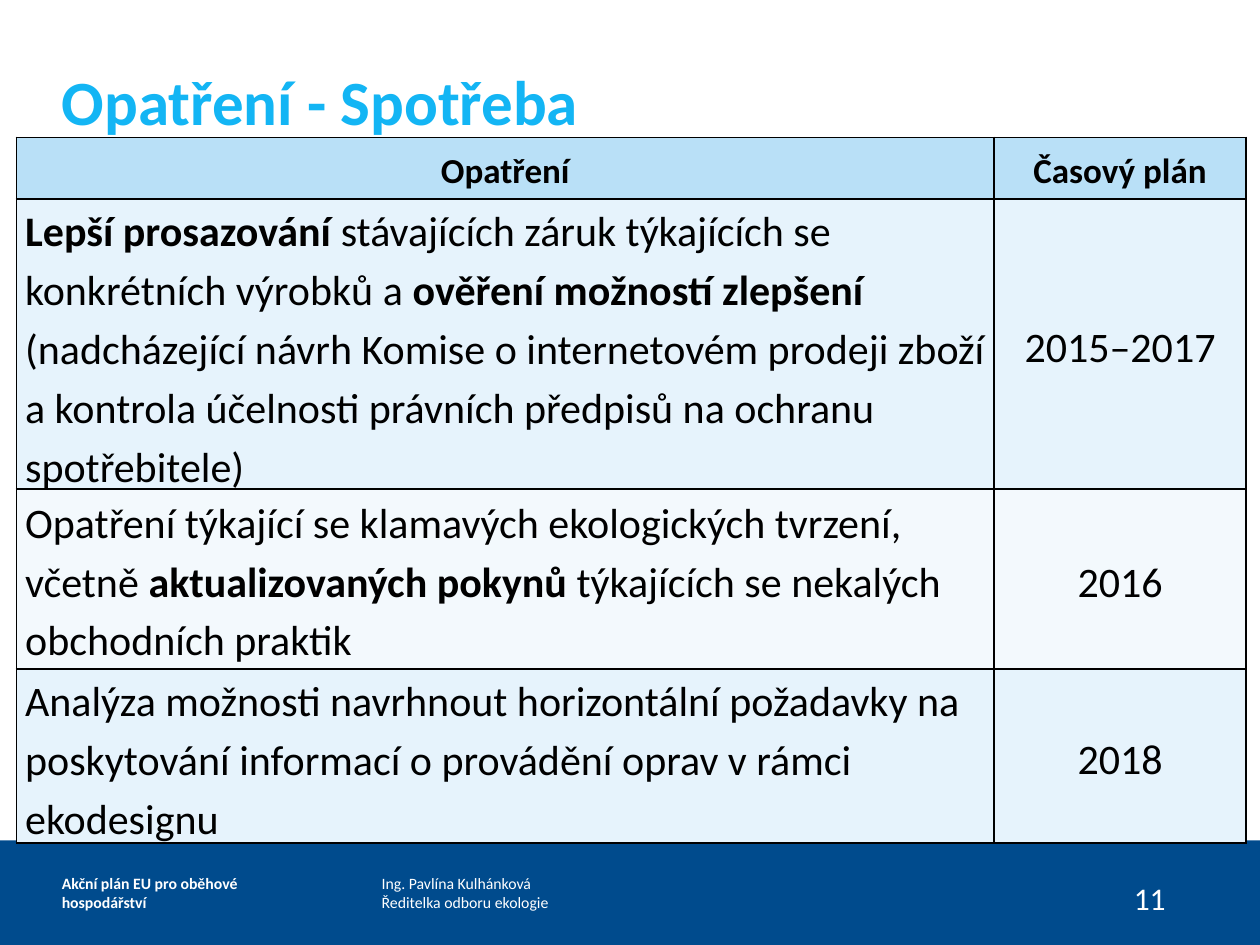
from lxml import etree
from pptx import Presentation
from pptx.dml.color import RGBColor
from pptx.enum import shapes, text
from pptx.util import Inches, Pt

NS = "http://schemas.openxmlformats.org/drawingml/2006/main"
MID = text.MSO_ANCHOR.MIDDLE


def style(font, size, color, bold=False):
    font.name, font.size, font.bold = "Calibri", Pt(size), bold
    font.color.rgb = RGBColor.from_string(color)


def write(shape, lines, size, color, bold=False, inset=0):
    frame = shape.text_frame
    frame.word_wrap, frame.vertical_anchor = True, MID
    frame.margin_left = frame.margin_right = Inches(inset)
    frame.margin_top = frame.margin_bottom = Inches(inset / 2)
    frame.text = "\n".join(lines)
    for para in frame.paragraphs:
        para.alignment = text.PP_ALIGN.LEFT
        style(para.font, size, color, bold)


prs = Presentation()
prs.slide_width, prs.slide_height = Inches(10), Inches(7.5)
slide = prs.slides.add_slide(prs.slide_layouts[5])

# Blue background with a white panel above the footer
back = slide.background.fill
back.solid()
back.fore_color.rgb = RGBColor.from_string("004B8D")
panel = slide.shapes.add_shape(
    shapes.MSO_SHAPE.RECTANGLE, 0, 0, Inches(10), Inches(6.67))
panel.shadow.inherit = False
panel.fill.solid()
panel.fill.fore_color.rgb = RGBColor.from_string("FFFFFF")
panel.line.fill.background()
slide.shapes._spTree.insert(2, panel._element)

# Footer
footer = [
    (0.49, 6.67, 2.05, 0.83, ["Akční plán EU pro oběhové hospodářství"], 9, True, 0),
    (3.03, 6.67, 1.97, 0.83,
     ["Ing. Pavlína Kulhánková", "Ředitelka odboru ekologie"], 9, False, 0),
    (8.9, 6.93, 0.5, 0.4, ["11"], 18, False, 0.1),
]
for left, top, width, height, lines, size, bold, inset in footer:
    box = slide.shapes.add_textbox(*map(Inches, (left, top, width, height)))
    write(box, lines, size, "FFFFFF", bold, inset)

# Title
title = slide.shapes.title
title.left, title.top = Inches(0.49), Inches(0.49)
title.width, title.height = Inches(9.01), Inches(0.61)
write(title, ["Opatření - Spotřeba"], 36, "13B5F4", True)

# Table: each cell is a list of runs, with every second run in bold
rows = [
    (0.49, "B9E0F7", ["", "Opatření"], ["", "Časový plán"]),
    (2.3, "E6F3FC",
     ["", "Lepší prosazování",
      " stávajících záruk týkajících se konkrétních výrobků a ",
      "ověření možností zlepšení",
      " (nadcházející návrh Komise o internetovém prodeji zboží a kontrola "
      "účelnosti právních předpisů na ochranu spotřebitele)"],
     ["2015–2017"]),
    (1.43, "F3F9FD",
     ["Opatření týkající se klamavých ekologických tvrzení, včetně ",
      "aktualizovaných pokynů", " týkajících se nekalých obchodních praktik"],
     ["2016"]),
    (1.38, "E6F3FC",
     ["Analýza možnosti navrhnout horizontální požadavky na poskytování "
      "informací o provádění oprav v rámci ekodesignu"],
     ["2018"]),
]
table = slide.shapes.add_table(
    len(rows), 2, Inches(0.13), Inches(1.09), Inches(9.76), Inches(5.6)).table
table.columns[0].width, table.columns[1].width = Inches(7.76), Inches(2)

for r, (height, fill, *cells) in enumerate(rows):
    table.rows[r].height = Inches(height)
    for c, parts in enumerate(cells):
        cell = table.cell(r, c)
        cell.vertical_anchor = MID
        cell.margin_left = cell.margin_right = Inches(0.07)
        cell.margin_top = cell.margin_bottom = 0
        cell.fill.solid()
        cell.fill.fore_color.rgb = RGBColor.from_string(fill)

        para = cell.text_frame.paragraphs[0]
        para.line_spacing = 1.15
        center = r == 0 or c == 1
        para.alignment = text.PP_ALIGN.CENTER if center else text.PP_ALIGN.LEFT
        for i, part in enumerate(parts):
            if part:
                run = para.add_run()
                run.text = part
                style(run.font, 24 if r else 20, "000000", i % 2 == 1)

        # Borders stand before the fill
        props = cell._tc.get_or_add_tcPr()
        for i, side in enumerate("LRTB"):
            props.insert(i, etree.fromstring(
                f'<a:ln{side} xmlns:a="{NS}" w="12700"><a:solidFill>'
                f'<a:srgbClr val="000000"/></a:solidFill></a:ln{side}>'))

prs.save("out.pptx")
